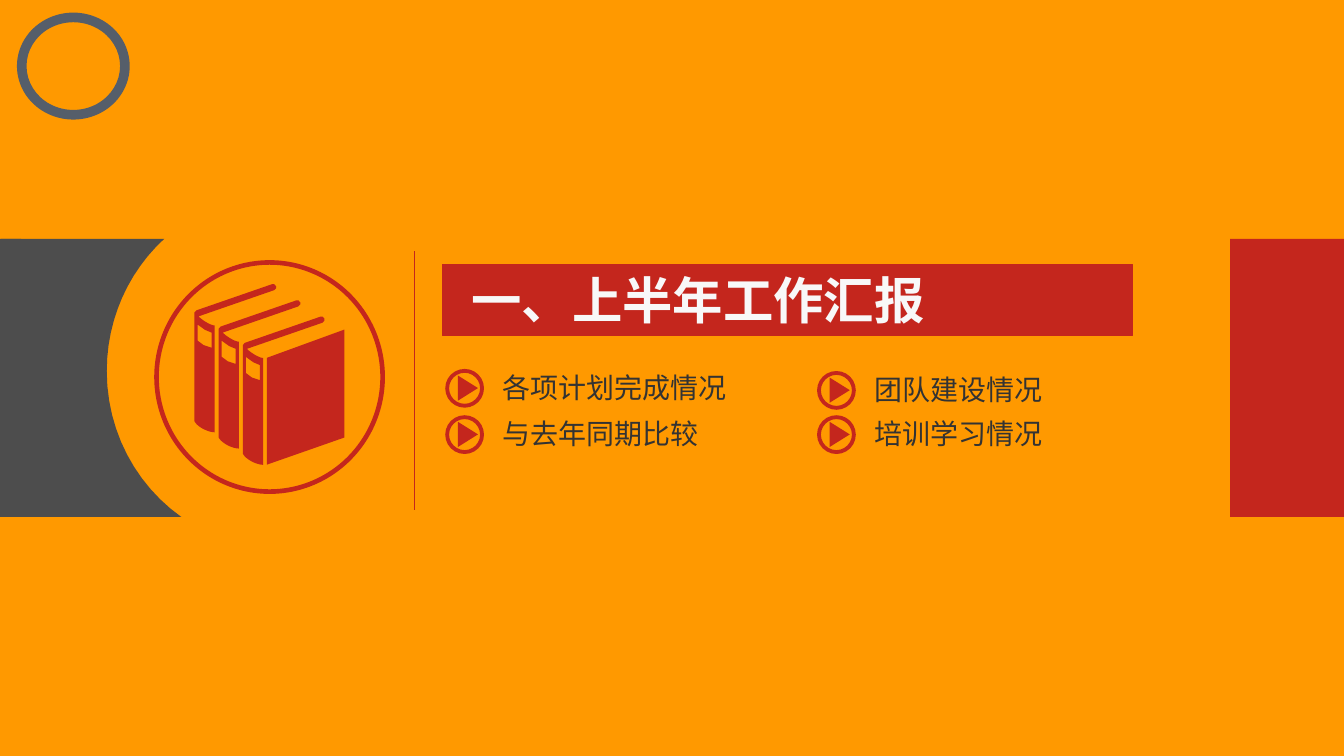
from dataclasses import dataclass

from lxml import etree
from pptx import Presentation
from pptx.dml import color as dml
from pptx.enum import shapes, text
from pptx.oxml import ns
from pptx.shapes import autoshape, shapetree
from pptx.util import Pt

ORANGE, RED, GREY, SLATE, INK, WHITE = "FF9900", "C4261D", "4D4D4D", "555E6A", "333333", "F8F8F8"
CJK_FONT = "Noto Sans CJK SC"
BAND_TOP, BAND_HEIGHT = 170.6, 198.7
BAND_BOTTOM = BAND_TOP + BAND_HEIGHT

Point = tuple[float, float]
Tree = shapetree.SlideShapes | shapetree.GroupShapes


@dataclass(frozen=True)
class Topic:
    label: str
    left: float
    top: float


@dataclass(frozen=True)
class Panel:
    left: float
    top: float
    width: float
    height: float
    fill: str
    line: str | None = None


TOPICS = [
    Topic("各项计划完成情况", 318.2, 263.5),
    Topic("与去年同期比较", 318.2, 296.6),
    Topic("团队建设情况", 583.9, 265),
    Topic("培训学习情况", 583.9, 296.6),
]
LEFT_EDGE = Panel(0, BAND_TOP, 15.1, BAND_HEIGHT, GREY)
RIGHT_PANEL = Panel(879.1, BAND_TOP, 81.4, BAND_HEIGHT, RED)
TITLE_BAR = Panel(316.1, 188.6, 493.2, 51.1, RED, RED)


def rgb(value: str) -> dml.RGBColor:
    return dml.RGBColor.from_string(value)


def paint(shape: autoshape.Shape, fill: str, line: str | None = None) -> None:
    shape.shadow.inherit = False
    shape.fill.solid()
    shape.fill.fore_color.rgb = rgb(fill)
    if line:
        shape.line.color.rgb = rgb(line)
        shape.line.width = Pt(0.75)
    else:
        shape.line.fill.background()


def curve(start: Point, first: Point, second: Point, end: Point, steps: int = 12) -> list[Point]:
    points = []
    for step in range(steps + 1):
        t = step / steps
        weights = ((1 - t) ** 3, 3 * t * (1 - t) ** 2, 3 * t * t * (1 - t), t ** 3)
        corners = (start, first, second, end)
        points.append((sum(w * p[0] for w, p in zip(weights, corners)),
                       sum(w * p[1] for w, p in zip(weights, corners))))
    return points


def add_outline(tree: Tree, contours: list[list[Point]], fill: str) -> None:
    builder = None
    for contour in contours:
        points = [(Pt(x), Pt(y)) for x, y in contour]
        if builder is None:
            builder = tree.build_freeform(*points[0])
        else:
            builder.move_to(*points[0])
        builder.add_line_segments(points[1:], close=True)
    paint(builder.convert_to_shape(), fill)


def add_panel(tree: Tree, panel: Panel) -> None:
    shape = tree.add_shape(shapes.MSO_SHAPE.RECTANGLE, Pt(panel.left), Pt(panel.top),
                           Pt(panel.width), Pt(panel.height))
    paint(shape, panel.fill, panel.line)


def add_ring(tree: Tree, left: float, top: float, width: float, height: float,
             thickness: float, fill: str) -> None:
    shape = tree.add_shape(shapes.MSO_SHAPE.DONUT, Pt(left), Pt(top), Pt(width), Pt(height))
    shape.adjustments[0] = thickness
    paint(shape, fill)


def add_text(tree: Tree, content: str, *, left: float, top: float, width: float, height: float,
             size: float, font: str, color: str, bold: bool = False, wrap: bool = True) -> None:
    shape = tree.add_textbox(Pt(left), Pt(top), Pt(width), Pt(height))
    frame = shape.text_frame
    frame.word_wrap = wrap
    frame.auto_size = text.MSO_AUTO_SIZE.SHAPE_TO_FIT_TEXT
    run = frame.paragraphs[0].add_run()
    run.text = content
    run.font.size = Pt(size)
    run.font.bold = bold
    run.font.name = font
    run.font.color.rgb = rgb(color)
    etree.SubElement(run._r.get_or_add_rPr(), ns.qn("a:ea"), typeface=CJK_FONT)


def add_divider(tree: Tree, x: float, top: float, bottom: float) -> None:
    line = tree.add_connector(shapes.MSO_CONNECTOR.STRAIGHT, Pt(x), Pt(bottom), Pt(x), Pt(top))
    line.line.color.rgb = rgb(RED)
    line.line.width = Pt(0.75)
    etree.SubElement(line._element.spPr, ns.qn("a:effectLst"))


def add_books(tree: Tree) -> None:
    spine = [
        (58.3, 1.4), (57, 0), (55.4, 0), (1.4, 18.7), (0, 20.2),
        *curve((0, 97.9), (2.2, 102.2), (10.1, 105.8), (14.4, 105.8)),
        *curve((14.4, 29.5), (12.2, 29.5), (6.5, 26.6), (2.9, 23)),
        (56.9, 4.3), (58.3, 2.9),
    ]
    label = [(12.2, 34.6), (12.2, 45.4), (6.5, 43.5), (2.2, 40.3), (2.2, 28.8), (7.5, 32.6)]
    cover = [(190.8, 255.6), (190.8, 331.9), (246.2, 312.5), (246.2, 235.4)]
    contours = [cover]
    for book in range(3):
        left, top = 139 + 17.3 * book, 203 + 11.6 * book
        contours += [[(left + x, top + y) for x, y in part] for part in (spine, label)]
    group = tree.add_group_shape().shapes
    add_ring(group, 110.2, 185.8, 164.9, 167, 0.02, RED)
    add_outline(group, contours, RED)


def add_topic(tree: Tree, topic: Topic) -> None:
    group = tree.add_group_shape().shapes
    add_ring(group, topic.left, topic.top, 27.7, 27.7, 0.1, RED)
    arrow = group.add_shape(shapes.MSO_SHAPE.ISOSCELES_TRIANGLE, Pt(topic.left + 7.2),
                            Pt(topic.top + 6.5), Pt(18), Pt(14.4))
    arrow.rotation = 90
    paint(arrow, RED)
    add_text(group, topic.label, left=topic.left + 33.8, top=topic.top - 2.6,
             width=20 * len(topic.label) + 15, height=31.7, size=20, font="Arial",
             color=INK, wrap=False)


def main() -> None:
    presentation = Presentation()
    presentation.slide_width, presentation.slide_height = Pt(960.5), Pt(540)
    slide = presentation.slides.add_slide(presentation.slide_layouts[6])
    slide.background.fill.solid()
    slide.background.fill.fore_color.rgb = rgb(ORANGE)
    tree = slide.shapes

    add_panel(tree, LEFT_EDGE)
    add_panel(tree, TITLE_BAR)
    add_text(tree, "一、上半年工作汇报", left=329.8, top=188.6, width=388.8, height=51.1,
             size=36, font=CJK_FONT, color=WHITE, bold=True)
    add_divider(tree, 295.9, 179.3, 364.3)
    add_books(tree)
    for topic in TOPICS:
        add_topic(tree, topic)
    add_outline(tree, [[
        (0.7, BAND_TOP),
        *curve((117.4, BAND_TOP), (92.2, 193.7), (76.3, 227.5), (76.3, 265)),
        *curve((76.3, 265), (76.3, 308.2), (97.2, 346.3), (129.6, BAND_BOTTOM)),
        (0.7, BAND_BOTTOM),
    ]], GREY)
    add_panel(tree, RIGHT_PANEL)
    add_ring(tree, 12.1, 9, 80.6, 76.4, 0.09, SLATE)
    presentation.save("out.pptx")


if __name__ == "__main__":
    main()
